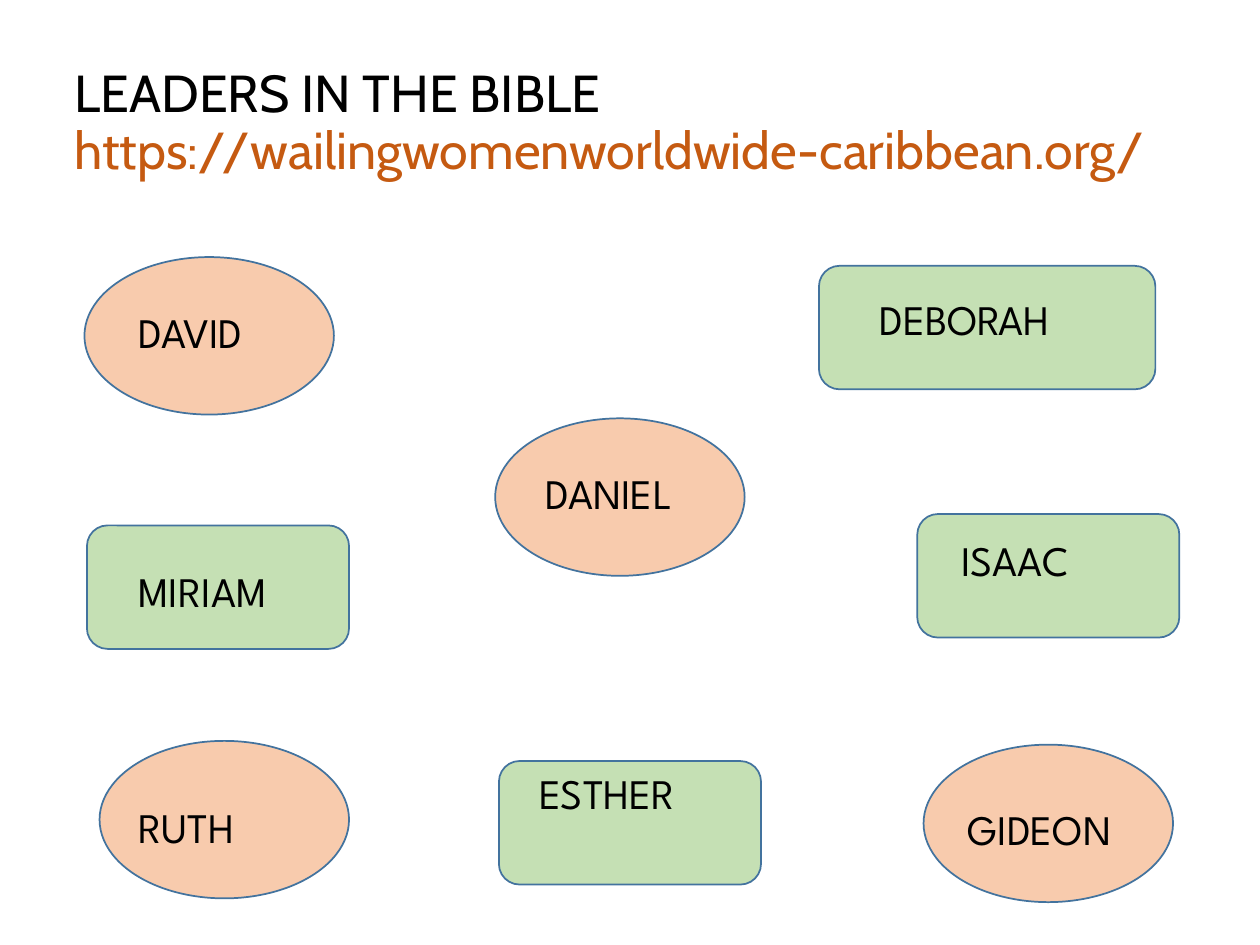
from pptx import Presentation
from pptx.dml.color import RGBColor
from pptx.enum.shapes import MSO_SHAPE
from pptx.enum.text import MSO_ANCHOR, MSO_AUTO_SIZE, PP_ALIGN
from pptx.util import Inches, Pt

BLACK = RGBColor(0x00, 0x00, 0x00)
ORANGE = RGBColor(0xC5, 0x5A, 0x11)
PEACH = RGBColor(0xF8, 0xCB, 0xAD)
GREEN = RGBColor(0xC5, 0xE0, 0xB4)
BLUE = RGBColor(0x43, 0x73, 0x9E)

TITLE = [
    ("LEADERS IN THE BIBLE", BLACK),
    ("https://wailingwomenworldwide-caribbean.org/", ORANGE),
]
OVAL = (MSO_SHAPE.OVAL, PEACH, 1.25)
CARD = (MSO_SHAPE.ROUNDED_RECTANGLE, GREEN, 0.98)
LABEL_HEIGHT = 0.5

# name, style, (shape left, top, width), (label left, top, width)
LEADERS = [
    ("DAVID", OVAL, (0.67, 2.04, 1.98), (1, 2.38, 1.32)),
    ("GIDEON", OVAL, (7.33, 5.91, 1.98), (7.58, 6.33, 1.58)),
    ("RUTH", OVAL, (0.79, 5.88, 1.98), (1, 6.31, 1.69)),
    ("DANIEL", OVAL, (3.93, 3.32, 1.98), (4.23, 3.66, 1.5)),
    ("DEBORAH", CARD, (6.5, 2.11, 2.67), (6.88, 2.28, 1.92)),
    ("MIRIAM", CARD, (0.69, 4.17, 2.08), (1, 4.44, 1.65)),
    ("ISAAC", CARD, (7.28, 4.08, 2.08), (7.53, 4.19, 1.58)),
    ("ESTHER", CARD, (3.96, 6.04, 2.08), (4.18, 6.04, 1.73)),
]


def apply_format(target, values):
    for name, value in values.items():
        setattr(target, name, value)


def add_span(para, text, font, size, color):
    span = para.add_run()
    span.text = text
    apply_format(span.font, {"name": font, "size": Pt(size)})
    span.font.color.rgb = color


def add_title(page):
    title = page.shapes.title
    apply_format(title, {"left": Inches(0.49), "top": Inches(0.26),
                         "width": Inches(9.26), "height": Inches(1.45)})
    apply_format(title.text_frame, {"vertical_anchor": MSO_ANCHOR.MIDDLE,
                                    "auto_size": MSO_AUTO_SIZE.NONE,
                                    "word_wrap": True})
    para = title.text_frame.paragraphs[0]
    apply_format(para, {"alignment": PP_ALIGN.LEFT, "line_spacing": 0.9})
    for index, (text, color) in enumerate(TITLE):
        if index:
            para.add_line_break()
        add_span(para, text, "Cabin", 29.7, color)


def add_figure(page, style, place):
    kind, color, height = style
    figure = page.shapes.add_shape(kind, *map(Inches, (*place, height)))
    figure.shadow.inherit = False
    figure.fill.solid()
    figure.fill.fore_color.rgb = color
    figure.line.color.rgb = BLUE
    figure.line.width = Pt(1)


def add_label(page, name, place):
    box = page.shapes.add_textbox(*map(Inches, (*place, LABEL_HEIGHT)))
    apply_format(box.text_frame, {"word_wrap": True,
                                  "auto_size": MSO_AUTO_SIZE.SHAPE_TO_FIT_TEXT})
    add_span(box.text_frame.paragraphs[0], name, "League Spartan", 24, BLACK)


def main():
    deck = Presentation()
    apply_format(deck, {"slide_width": Inches(10), "slide_height": Inches(7.5)})
    page = deck.slides.add_slide(deck.slide_layouts[5])
    add_title(page)
    for name, style, figure_place, label_place in LEADERS:
        add_figure(page, style, figure_place)
    for name, style, figure_place, label_place in LEADERS:
        add_label(page, name, label_place)
    deck.save("out.pptx")


if __name__ == "__main__":
    main()
